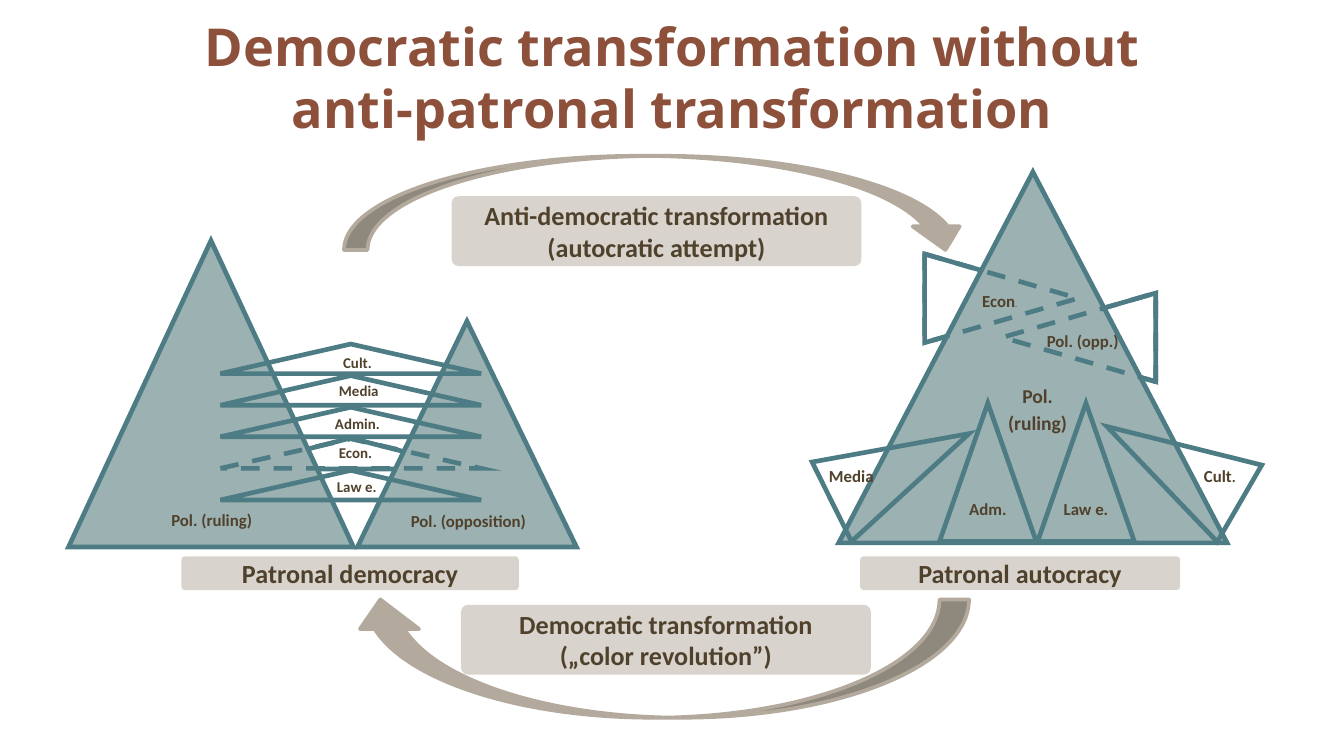
"""Build the slide on moves between patronal democracy and patronal autocracy."""
from lxml.etree import SubElement
from pptx import Presentation
from pptx.dml.color import RGBColor
from pptx.enum.dml import MSO_LINE
from pptx.enum.shapes import MSO_SHAPE as Preset
from pptx.enum.text import MSO_ANCHOR as Anchor, MSO_AUTO_SIZE as AutoSize, PP_ALIGN as Align
from pptx.oxml.ns import qn
from pptx.util import Inches, Pt

TEAL, SAGE, SAND, BROWN, RUST = "4D7C84", "9CB1B1", "B3AA9D", "50412C", "8D503B"

SLIDE_WIDTH = Inches(10)
SLIDE_HEIGHT = SLIDE_WIDTH * 9 // 16

TITLE = ["Democratic transformation without", "anti-patronal transformation"]
LAYERS = [
    ("Cult.", (2.42, 2.57, 0.48, 0.23)),
    ("Media", (2.42, 2.78, 0.5, 0.23)),
    ("Admin.", (2.37, 3.02, 0.58, 0.24)),
    ("Econ.", (2.39, 3.25, 0.51, 0.22)),
    ("Law e.", (2.38, 3.54, 0.55, 0.14)),
]
LAYER_LEFT, LAYER_TOP, LAYER_BOTTOM, LAYER_SIZE = 1.64, 2.56, 3.5, (1.94, 0.22)
ECON_BASE = (1.71, 3.26, 1.8, 0.23)
DEMOCRACY_PYRAMIDS = [(0.51, 1.79, 2.12, 2.28), (2.66, 2.39, 1.63, 1.68)]
DEMOCRACY_PARTIES = [
    ("Pol. (ruling)", (1.17, 3.72, 0.81, 0.26)),
    ("Pol. (opposition)", (2.95, 3.73, 1.07, 0.26)),
]

AUTOCRACY_PYRAMID = (6.24, 1.28, 2.89, 2.76)
SATELLITE_SIZE = (0.66, 1.14)
CROSSING = [((7.12, 1.65), 90), ((7.7, 1.94), 270)]
CORNERS = [((8.4, 2.89), 300.1), ((6.37, 2.91), 63.6)]
INNER = [("Adm.", (6.99, 3, 0.72, 1.03)), ("Law e.", (7.72, 3, 0.72, 1.03))]
AUTOCRACY_LABELS = [
    ([("Econ", 9), (".", 4)], (7.21, 2.09, 0.48, 0.22)),
    ([("Pol. (opp.)", 9)], (7.69, 2.39, 0.75, 0.22)),
    ([("Media", 9)], (6.07, 3.39, 0.56, 0.18)),
    ([("Cult", 9), (".", 8)], (8.86, 3.39, 0.44, 0.25)),
]
RULING = ("Pol. (ruling)", (7.36, 2.78, 0.72, 0.5))

ARROWS = [((2.56, 1.16, 4.65, 0.7), 0), ((2.61, 4.46, 4.6, 0.88), 180)]
PLATES = [
    (["Democratic transformation", "(„color revolution”)"], (3.43, 4.5, 3.05, 0.52)),
    (["Anti-democratic transformation", "(autocratic attempt)"], (3.36, 1.46, 3.05, 0.52)),
    (["Patronal democracy"], (1.35, 4.14, 2.51, 0.25)),
    (["Patronal autocracy"], (6.4, 4.14, 2.38, 0.25)),
]


def color(hex_value):
    return RGBColor.from_string(hex_value)


def add_run(paragraph, text, size, font="Calibri", hue=BROWN):
    run = paragraph.add_run()
    run.text = text
    run.font.name, run.font.size, run.font.bold = font, Pt(size), True
    run.font.color.rgb = color(hue)


def add_lines(paragraph, lines, *style):
    paragraph.alignment = Align.CENTER
    for index, line in enumerate(lines):
        if index:
            paragraph.add_line_break()
        add_run(paragraph, line, *style)


def fill_label(frame, runs, alignment):
    paragraph = frame.paragraphs[0]
    paragraph.alignment = alignment
    paragraph.line_spacing, paragraph.space_after = 1.15, Pt(10)
    for text, size in runs:
        add_run(paragraph, text, size)


def add_label(shapes, runs, box, alignment=Align.CENTER, anchor=Anchor.TOP, wrap=True, grow=False):
    frame = shapes.add_textbox(*map(Inches, box)).text_frame
    frame.word_wrap, frame.vertical_anchor = wrap, anchor
    frame.auto_size = AutoSize.SHAPE_TO_FIT_TEXT if grow else AutoSize.NONE
    fill_label(frame, runs, alignment)


def add_preset(shapes, preset, box, fill=None, line=None, width=2.5, rotation=0):
    shape = shapes.add_shape(preset, *map(Inches, box))
    shape.shadow.inherit = False
    shape.rotation = rotation
    for part, hue in ((shape.fill, fill), (shape.line.fill, line)):
        if hue:
            part.solid()
            part.fore_color.rgb = color(hue)
        else:
            part.background()
    if line:
        shape.line.width = Pt(width)
    return shape


def add_triangle(shapes, box, fill=None, rotation=0, dashed=False):
    shape = add_preset(shapes, Preset.ISOSCELES_TRIANGLE, box, fill, TEAL, rotation=rotation)
    if dashed:
        shape.line.dash_style = MSO_LINE.DASH
    SubElement(shape.line._get_or_add_ln(), qn("a:miter"), lim="800000")
    return shape


def center_text(shape):
    frame = shape.text_frame
    frame.margin_left = frame.margin_right = frame.margin_top = frame.margin_bottom = 0
    frame.word_wrap, frame.vertical_anchor = True, Anchor.MIDDLE
    return frame


def add_democracy(shapes):
    add_triangle(shapes, ECON_BASE)
    for box in DEMOCRACY_PYRAMIDS:
        add_triangle(shapes, box, SAGE)
    step = (LAYER_BOTTOM - LAYER_TOP) / (len(LAYERS) - 1)
    for index, (text, label_box) in enumerate(LAYERS):
        top = LAYER_TOP + index * step
        add_triangle(shapes, (LAYER_LEFT, top, *LAYER_SIZE), dashed=text == "Econ.")
        add_label(shapes, [(text, 8)], label_box, anchor=Anchor.MIDDLE)
    for text, box in DEMOCRACY_PARTIES:
        add_label(shapes, [(text, 9)], box, wrap=False, grow=True)


def add_satellites(shapes, satellites, dashed=False):
    for position, rotation in satellites:
        add_triangle(shapes, (*position, *SATELLITE_SIZE), rotation=rotation, dashed=dashed)


def add_autocracy(shapes):
    add_satellites(shapes, CROSSING)
    add_triangle(shapes, AUTOCRACY_PYRAMID, SAGE)
    add_satellites(shapes, CORNERS)
    add_satellites(shapes, CROSSING, dashed=True)
    for text, box in INNER:
        fill_label(center_text(add_triangle(shapes, box)), [(text, 9)], Align.CENTER)
    for runs, box in AUTOCRACY_LABELS:
        add_label(shapes, runs, box, Align.LEFT)
    text, box = RULING
    add_label(shapes, [(text, 10.5)], box, grow=True)


def add_plate(shapes, lines, box):
    shape = add_preset(shapes, Preset.ROUNDED_RECTANGLE, box, SAND)
    shape.adjustments[0] = 0.1
    hue = shape.fill._xPr.find(qn("a:solidFill"))[0]
    SubElement(hue, qn("a:alpha"), val="50000")
    add_lines(center_text(shape).paragraphs[0], lines, 14)


def main():
    presentation = Presentation()
    presentation.slide_width, presentation.slide_height = SLIDE_WIDTH, SLIDE_HEIGHT
    shapes = presentation.slides.add_slide(presentation.slide_layouts[6]).shapes
    add_democracy(shapes.add_group_shape().shapes)
    add_autocracy(shapes.add_group_shape().shapes)
    for box, rotation in ARROWS:
        add_preset(shapes, Preset.CURVED_DOWN_ARROW, box, SAND, SAND, 2, rotation)
    for lines, box in PLATES:
        add_plate(shapes, lines, box)
    title = shapes.add_textbox(*map(Inches, (0.12, 0.3, 9.76, 0.54))).text_frame
    title.word_wrap, title.vertical_anchor = True, Anchor.MIDDLE
    add_lines(title.paragraphs[0], TITLE, 28, "Open Sans", RUST)
    presentation.save("out.pptx")


if __name__ == "__main__":
    main()
